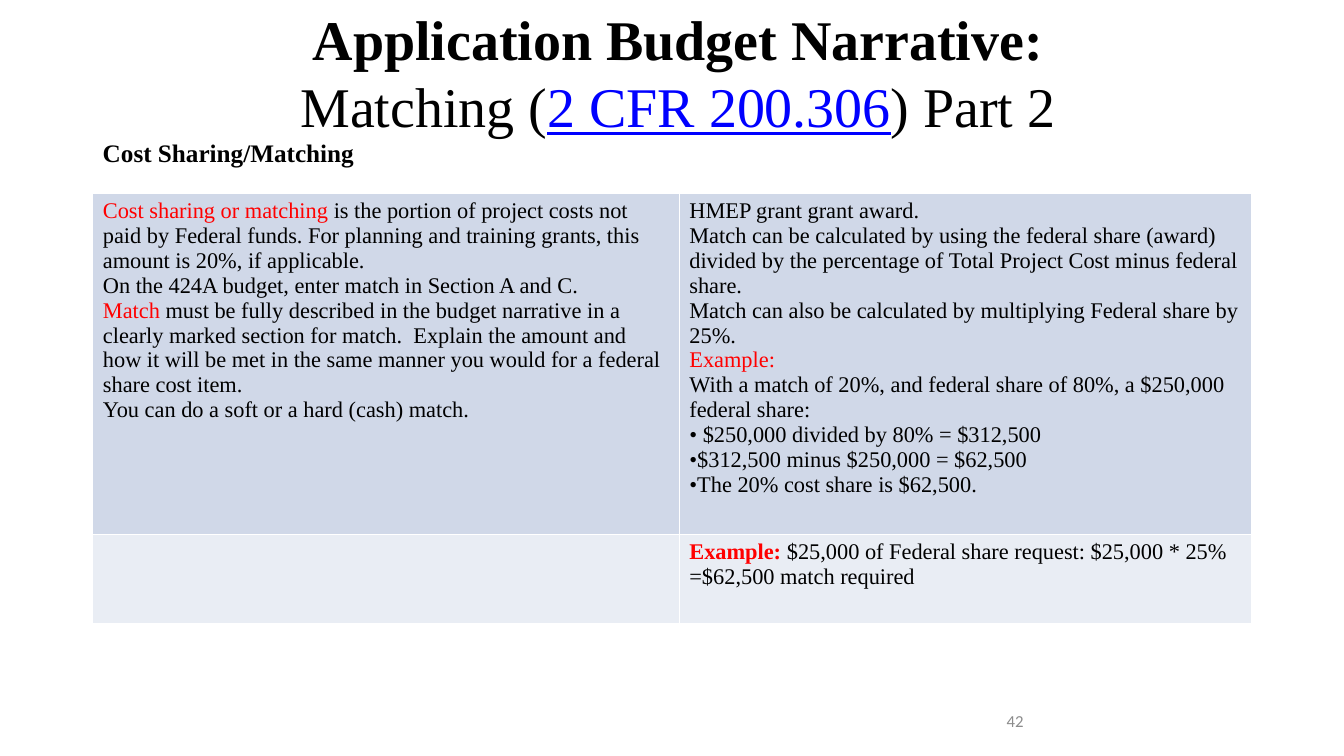
from pptx import Presentation
from pptx.dml.color import RGBColor
from pptx.enum.text import MSO_ANCHOR as ANCHOR, MSO_AUTO_SIZE as FIT, PP_ALIGN as ALIGN
from pptx.util import Cm, Pt

BLACK, RED, BLUE, GREY = "000000", "FF0000", "0000FF", "8C8C8C"
ROW_FILLS = ["D0D8E8", "E9EDF4"]

MATCH_RULES = [
    [("Cost sharing or matching ", RED),
     ("is the portion of project costs not paid by Federal funds. For planning and "
      "training grants, this amount is 20%, if applicable.", BLACK)],
    [("On the 424A budget, enter match in Section A and C.", BLACK)],
    [("Match ", RED),
     ("must be fully described in the budget narrative in a clearly marked section for "
      "match.  Explain the amount and how it will be met in the same manner you would "
      "for a federal share cost item.", BLACK)],
    [("You can do a soft or a hard (cash) match.", BLACK)],
]
MATCH_CALCULATION = [
    [("HMEP grant grant award.", BLACK)],
    [("Match can be calculated by using the federal share (award) divided by the "
      "percentage of Total Project Cost minus federal share.", BLACK)],
    [("Match can also be calculated by multiplying Federal share by 25%.", BLACK)],
    [("Example:", RED)],
    [("With a match of 20%, and federal share of 80%, a $250,000 federal share:", BLACK)],
    [("• $250,000 divided by 80% = $312,500", BLACK)],
    [("•$312,500 minus $250,000 = $62,500", BLACK)],
    [("•The 20% cost share is $62,500.", BLACK)],
]
SHORT_EXAMPLE = [
    [("Example:", RED, True),
     (" $25,000 of Federal share request: $25,000 * 25% =$62,500 match required", BLACK)],
]


def rgb(value):
    return RGBColor.from_string(value)


class SlideBuilder:
    """Hold the text style and the current slide, and add elements to it."""

    def __init__(self, prs, font="Times New Roman"):
        self.font = font
        self.s = prs.slides.add_slide(prs.slide_layouts[5])

    def fill_text(self, tf, paragraphs, size, font=None, align=None, spacing=None):
        for i, runs in enumerate(paragraphs):
            p = tf.add_paragraph() if i else tf.paragraphs[0]
            p.font.size, p.font.name = Pt(size), font or self.font
            p.alignment, p.line_spacing = align, spacing
            for text, color, *bold in runs:
                r = p.add_run()
                r.text = text
                r.font.color.rgb = rgb(color)
                r.font.bold = bool(bold)
                r.font.underline = True if color == BLUE else None

    def title(self, box, paragraphs, size):
        sp = self.s.shapes.title
        sp.left, sp.top, sp.width, sp.height = map(Cm, box)
        tf = sp.text_frame
        tf.auto_size, tf.vertical_anchor = FIT.NONE, ANCHOR.MIDDLE
        self.fill_text(tf, paragraphs, size, align=ALIGN.CENTER, spacing=Pt(48))

    def text(self, box, paragraphs, size, font=None, anchor=ANCHOR.TOP):
        tf = self.s.shapes.add_textbox(*map(Cm, box)).text_frame
        tf.word_wrap, tf.vertical_anchor = True, anchor
        self.fill_text(tf, paragraphs, size, font)

    def table(self, left, top, widths, heights, rows, size):
        box = map(Cm, (left, top, sum(widths), sum(heights)))
        table = self.s.shapes.add_table(len(heights), len(widths), *box).table
        table.first_row = False
        for column, width in zip(table.columns, widths):
            column.width = Cm(width)
        for row, height, cells, fill in zip(table.rows, heights, rows, ROW_FILLS):
            row.height = Cm(height)
            for cell, paragraphs in zip(row.cells, cells):
                cell.fill.solid()
                cell.fill.fore_color.rgb = rgb(fill)
                self.fill_text(cell.text_frame, paragraphs, size)


def main():
    prs = Presentation()
    prs.slide_width, prs.slide_height = Cm(33.87), Cm(19.05)
    slide = SlideBuilder(prs)
    slide.title((0.15, 0.2, 33.87, 3.2), [
        [("Application Budget Narrative:", BLACK, True)],
        [("Matching (", BLACK), ("2 CFR 200.306", BLUE), (") Part 2", BLACK)],
    ], 40)
    slide.text((2.34, 3.33, 24.92, 1.02), [[("Cost Sharing/Matching", BLACK, True)]], 18)
    slide.table(2.34, 4.88, [14.78, 14.43], [8.59, 2.24],
                [[MATCH_RULES, MATCH_CALCULATION], [[[]], SHORT_EXAMPLE]], 16)
    slide.text((25.12, 17.65, 7.9, 1.02), [[("42", GREY)]], 12, "Calibri", ANCHOR.MIDDLE)
    prs.save("out.pptx")


if __name__ == "__main__":
    main()
